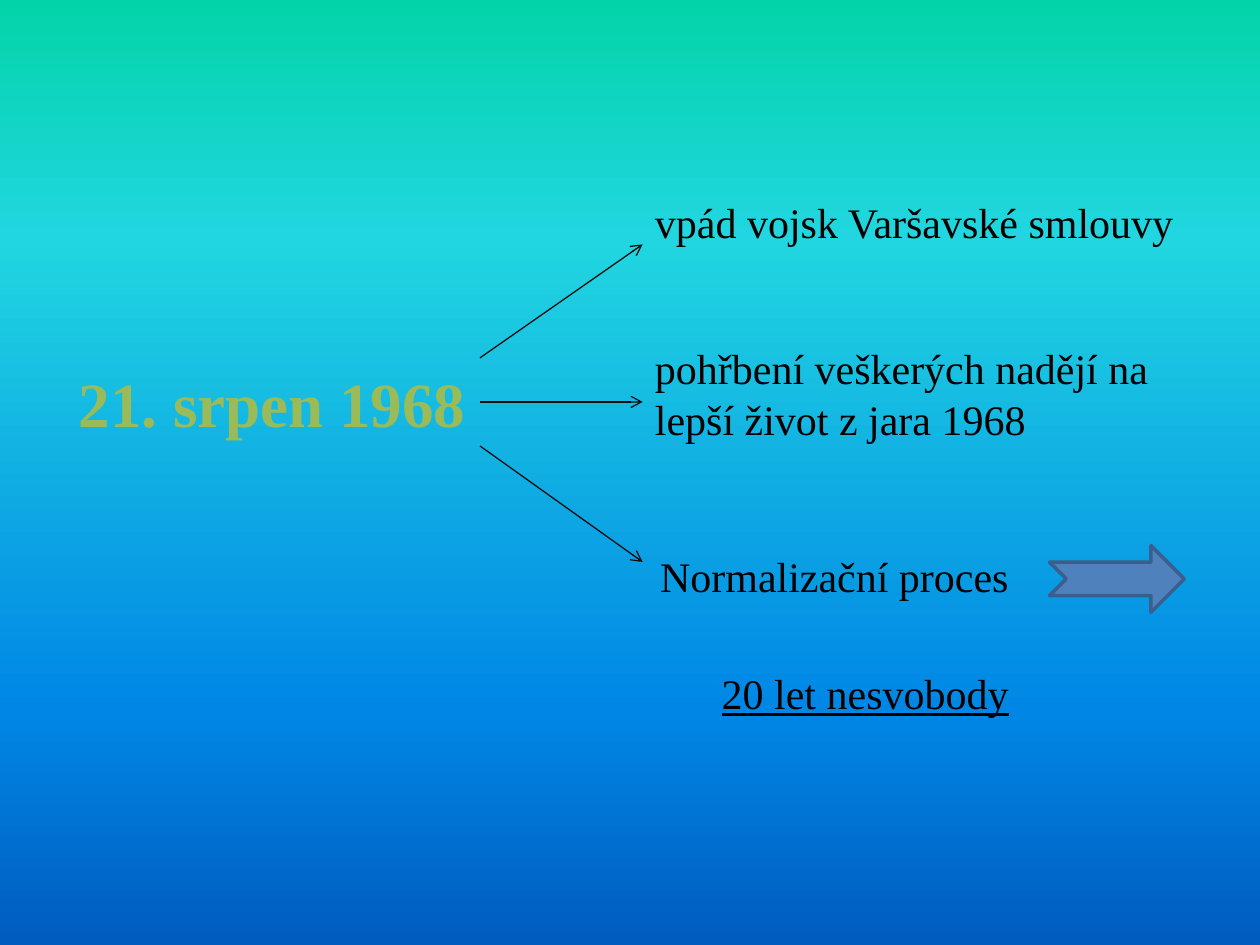
from lxml import etree
from pptx import Presentation
from pptx import util as u
from pptx.dml import color
from pptx.enum import shapes, text
from pptx.oxml import ns

FONT = "Times New Roman"
COLORS = {
    "text": "000000",
    "title": "9BBB59",
    "connector": "0D0D0D",
    "arrow": "4F81BD",
    "arrow_line": "3A5F8C",
}
BACKGROUND_STOPS = {0: "03D4A8", 25: "21D6E0", 75: "0087E6", 100: "005CBF"}
TITLE_BOX = (0.51, 2.84, 3.3, 0.7)
CONSEQUENCES = [
    ((5.1, 1.51, 4.36, 0.5), ["vpád vojsk Varšavské smlouvy"], False),
    ((5.1, 2.67, 4.24, 0.91),
     ["pohřbení veškerých nadějí na", "lepší život z jara 1968"], False),
    ((5.14, 4.32, 2.99, 0.5), ["Normalizační proces"], False),
    ((5.63, 5.25, 2.5, 0.5), ["20 let nesvobody"], True),
]
ARROW_BOX = (8.33, 4.33, 1.07, 0.53)
CONNECTOR_END_X = 5.1
CONNECTOR_END_YS = (1.94, 3.19, 4.46)


def rgb(name):
    """Return the named colour."""
    return color.RGBColor.from_string(COLORS[name])


def inches(box):
    """Convert a box of numbers to lengths."""
    return [u.Inches(value) for value in box]


def add_run(paragraph, wording, size, color_name):
    """Add a formatted run and return it."""
    run = paragraph.add_run()
    run.text = wording
    run.font.name = FONT
    run.font.size = u.Pt(size)
    run.font.color.rgb = rgb(color_name)
    return run


def paint_background(slide):
    """Fill the background with a gradient from top to bottom."""
    fill = slide.background.fill
    fill.gradient()
    fill.gradient_angle = 270
    properties = slide.background._cSld.bg.bgPr
    stop_list = properties.find(".//" + ns.qn("a:gsLst"))
    for stop in list(stop_list):
        stop_list.remove(stop)
    for position, value in BACKGROUND_STOPS.items():
        stop = etree.SubElement(stop_list, ns.qn("a:gs"), pos=str(position * 1000))
        etree.SubElement(stop, ns.qn("a:srgbClr"), val=value)


def add_title(slide, box):
    """Place the date in the title placeholder and return it."""
    title = slide.shapes.title
    title.left, title.top, title.width, title.height = inches(box)
    frame = title.text_frame
    frame.word_wrap = False
    frame.auto_size = text.MSO_AUTO_SIZE.NONE
    frame.vertical_anchor = text.MSO_ANCHOR.MIDDLE
    paragraph = frame.paragraphs[0]
    paragraph.alignment = text.PP_ALIGN.CENTER
    add_run(paragraph, "21. srpen 1968", 36, "title").font.bold = True
    return title


def add_consequence(slide, box, lines, underlined):
    """Place one consequence, a paragraph for each line."""
    frame = slide.shapes.add_textbox(*inches(box)).text_frame
    frame.word_wrap = False
    frame.auto_size = text.MSO_AUTO_SIZE.SHAPE_TO_FIT_TEXT
    for index, line in enumerate(lines):
        paragraph = frame.add_paragraph() if index else frame.paragraphs[0]
        run = add_run(paragraph, line, 24, "text")
        if underlined:
            run.font.underline = True


def add_block_arrow(slide, box):
    """Place the notched arrow."""
    arrow = slide.shapes.add_shape(
        shapes.MSO_SHAPE.NOTCHED_RIGHT_ARROW, *inches(box))
    arrow.shadow.inherit = False
    arrow.fill.solid()
    arrow.fill.fore_color.rgb = rgb("arrow")
    arrow.line.color.rgb = rgb("arrow_line")
    arrow.line.width = u.Pt(2)


def add_connectors(slide, title):
    """Fan arrows out from the right side of the title."""
    right = title.left + title.width
    for index, end_y in enumerate(CONNECTOR_END_YS):
        connector = slide.shapes.add_connector(
            shapes.MSO_CONNECTOR.STRAIGHT,
            right, title.top + title.height * index // 2,
            u.Inches(CONNECTOR_END_X), u.Inches(end_y))
        if index == 1:
            connector.begin_connect(title, 3)
        connector.line.color.rgb = rgb("connector")
        connector.line.width = u.Pt(0.75)
        etree.SubElement(
            connector.line._get_or_add_ln(), ns.qn("a:tailEnd"), type="arrow")
        etree.SubElement(connector._element.spPr, ns.qn("a:effectLst"))


def build_slide(presentation):
    """Build the slide on the date and its consequences."""
    slide = presentation.slides.add_slide(presentation.slide_layouts[5])
    paint_background(slide)
    title = add_title(slide, TITLE_BOX)
    for box, lines, underlined in CONSEQUENCES:
        add_consequence(slide, box, lines, underlined)
    add_block_arrow(slide, ARROW_BOX)
    add_connectors(slide, title)


def main():
    """Create and save the presentation."""
    presentation = Presentation()
    presentation.slide_width = u.Inches(10)
    presentation.slide_height = u.Inches(7.5)
    build_slide(presentation)
    presentation.save("out.pptx")


if __name__ == "__main__":
    main()
